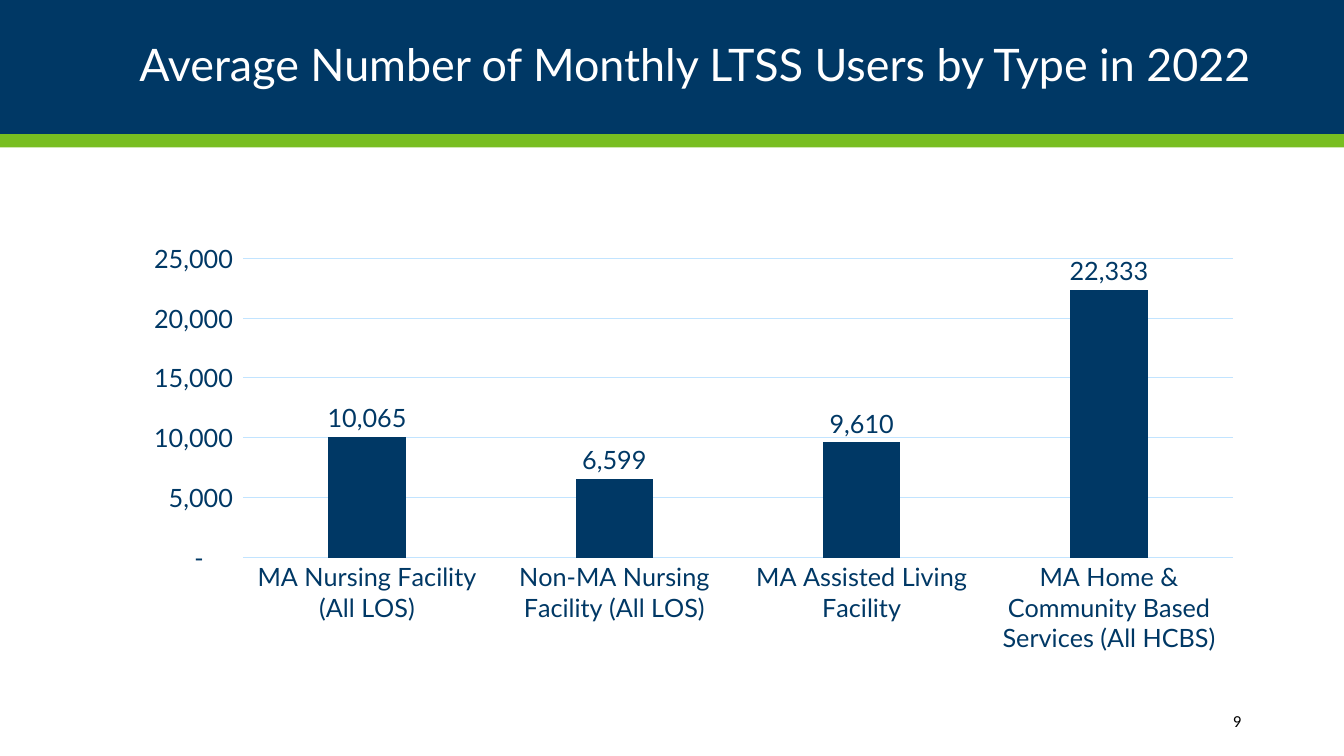
from dataclasses import dataclass

from lxml import etree
from pptx import Presentation
from pptx.chart.data import CategoryChartData
from pptx.dml.color import RGBColor
from pptx.enum.chart import XL_CHART_TYPE, XL_LABEL_POSITION, XL_TICK_MARK
from pptx.enum.shapes import MSO_SHAPE
from pptx.enum.text import MSO_ANCHOR, PP_ALIGN
from pptx.oxml.ns import qn
from pptx.util import Inches, Pt

RECTANGLE = MSO_SHAPE.RECTANGLE
COLUMNS = XL_CHART_TYPE.COLUMN_CLUSTERED
ABOVE_BAR = XL_LABEL_POSITION.OUTSIDE_END
NO_TICK = XL_TICK_MARK.NONE
MIDDLE = MSO_ANCHOR.MIDDLE
RIGHT = PP_ALIGN.RIGHT

TITLE = "Average Number of Monthly LTSS Users by Type in 2022"
PAGE = "9"
SERIES = "Series 1"
USERS = {
    "MA Nursing Facility (All LOS)": 10065,
    "Non-MA Nursing Facility (All LOS)": 6599,
    "MA Assisted Living Facility": 9610,
    "MA Home & Community Based Services (All HCBS)": 22333,
}
ACCOUNTING = r'_(* #,##0_);_(* \(#,##0\);_(* "-"??_);_(@_)'
PLOT_SHARES = {"x": 0.13, "y": 0.164, "w": 0.854, "h": 0.593}


@dataclass(frozen=True)
class Theme:
    navy: RGBColor = RGBColor(0x00, 0x38, 0x65)
    green: RGBColor = RGBColor(0x78, 0xBE, 0x21)
    grid: RGBColor = RGBColor(0xC2, 0xE4, 0xFF)
    white: RGBColor = RGBColor(0xFF, 0xFF, 0xFF)
    black: RGBColor = RGBColor(0, 0, 0)
    heading_font: str = "Lato"
    page_font: str = "Calibri"
    title_size: int = 32
    chart_size: int = 18
    page_size: int = 12
    hairline: float = 0.75


THEME = Theme()
WIDTH, HEIGHT = 13.33, 7.5
MARGIN = 0.92
CONTENT_WIDTH = WIDTH - 2 * MARGIN
BANNER_HEIGHT = 1.33
STRIPE_HEIGHT = BANNER_HEIGHT / 10
CHART_TOP, CHART_HEIGHT = 1.74, 5.01
PAGE_TOP, PAGE_WIDTH, PAGE_HEIGHT = 6.95, 1.6, 0.4


def style(font, size, color, name):
    font.size, font.name = Pt(size), name
    font.color.rgb = color


def add_band(slide, top, height, color):
    band = slide.shapes.add_shape(
        RECTANGLE, 0, Inches(top), Inches(WIDTH), Inches(height))
    band.shadow.inherit = False
    band.fill.solid()
    band.fill.fore_color.rgb = color
    band.line.fill.background()


def add_right_text(slide, text, box, inset, size, color, font_name):
    frame = slide.shapes.add_textbox(*map(Inches, box)).text_frame
    frame.word_wrap = True
    frame.vertical_anchor = MIDDLE
    frame.margin_left = frame.margin_right = Inches(inset)
    line = frame.paragraphs[0]
    line.text, line.alignment = text, RIGHT
    style(line.font, size, color, font_name)
    return line


def fix_plot_area(chart):
    """Pin the inner plot area to fixed shares of the chart frame."""
    plot_area = chart.plots[0]._element.getparent()
    layout = plot_area.find(qn("c:layout"))
    if layout is None:
        layout = etree.Element(qn("c:layout"))
        plot_area.insert(0, layout)
    manual = etree.SubElement(layout, qn("c:manualLayout"))
    settings = {"layoutTarget": "inner", "xMode": "edge", "yMode": "edge",
                **PLOT_SHARES}
    for tag, value in settings.items():
        etree.SubElement(manual, qn(f"c:{tag}")).set("val", str(value))


def color_line(line):
    line.color.rgb = THEME.grid
    line.width = Pt(THEME.hairline)


def add_users_chart(slide):
    data = CategoryChartData(number_format=ACCOUNTING)
    data.categories = list(USERS)
    data.add_series(SERIES, list(USERS.values()))
    box = (MARGIN, CHART_TOP, CONTENT_WIDTH, CHART_HEIGHT)
    chart = slide.shapes.add_chart(COLUMNS, *map(Inches, box), data).chart
    chart.has_legend = chart.has_title = False
    style(chart.font, THEME.chart_size, THEME.navy, THEME.heading_font)

    bars = chart.plots[0]
    bars.vary_by_categories = False
    bars.gap_width, bars.overlap = 219, -27
    fill = bars.series[0].format.fill
    fill.solid()
    fill.fore_color.rgb = THEME.navy
    bars.has_data_labels = True
    labels = bars.data_labels
    labels.show_value, labels.position = True, ABOVE_BAR
    labels.number_format, labels.number_format_is_linked = ACCOUNTING, False

    categories, counts = chart.category_axis, chart.value_axis
    for axis in (categories, counts):
        axis.major_tick_mark = axis.minor_tick_mark = NO_TICK
    for part in (labels, categories.tick_labels, counts.tick_labels):
        style(part.font, THEME.chart_size, THEME.navy, THEME.heading_font)
    color_line(categories.format.line)
    color_line(counts.major_gridlines.format.line)
    counts.format.line.fill.background()
    counts.minimum_scale, counts.maximum_scale = 0, 25000
    counts.major_unit = 5000
    counts.tick_labels.number_format = ACCOUNTING
    counts.tick_labels.number_format_is_linked = False
    fix_plot_area(chart)


def main():
    deck = Presentation()
    deck.slide_width, deck.slide_height = Inches(WIDTH), Inches(HEIGHT)
    slide = deck.slides.add_slide(deck.slide_layouts[6])
    add_band(slide, 0, BANNER_HEIGHT, THEME.navy)
    add_band(slide, BANNER_HEIGHT, STRIPE_HEIGHT, THEME.green)
    title = add_right_text(
        slide, TITLE, (MARGIN, 0, CONTENT_WIDTH, BANNER_HEIGHT), 0,
        THEME.title_size, THEME.white, THEME.heading_font)
    title.line_spacing = 0.9
    add_users_chart(slide)
    page_left = WIDTH - MARGIN - PAGE_WIDTH
    add_right_text(
        slide, PAGE, (page_left, PAGE_TOP, PAGE_WIDTH, PAGE_HEIGHT), 0.1,
        THEME.page_size, THEME.black, THEME.page_font)
    deck.save("out.pptx")


if __name__ == "__main__":
    main()
